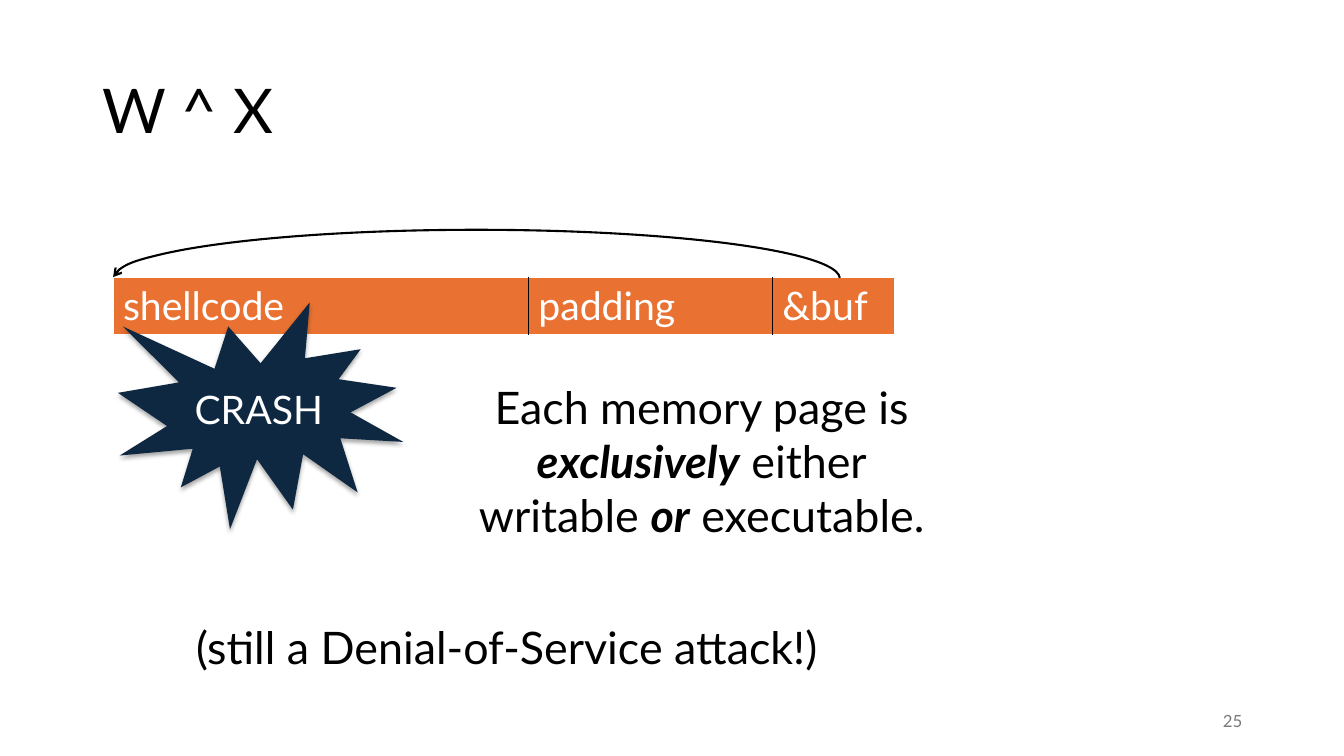
from pptx import Presentation
from pptx.dml.color import RGBColor
from pptx.enum.shapes import MSO_SHAPE
from pptx.enum.text import MSO_ANCHOR, MSO_AUTO_SIZE, PP_ALIGN
from pptx.oxml import parse_xml
from pptx.oxml.ns import nsdecls, qn
from pptx.util import Inches, Pt

ARC, BURST = MSO_SHAPE.ARC, MSO_SHAPE.EXPLOSION1
TOP, MIDDLE = MSO_ANCHOR.TOP, MSO_ANCHOR.MIDDLE
LEFT, CENTER, RIGHT = PP_ALIGN.LEFT, PP_ALIGN.CENTER, PP_ALIGN.RIGHT
FIT_SHAPE = MSO_AUTO_SIZE.SHAPE_TO_FIT_TEXT
FONT = "Lato"
BLACK, WHITE, GREY, ORANGE, NAVY = "000000", "FFFFFF", "797979", "E97132", "0E2841"


def rgb(value):
    """Turn a hex string into a colour."""
    return RGBColor.from_string(value)


def box(left, top, width, height):
    """Turn four numbers in inches into lengths."""
    return [Inches(v) for v in (left, top, width, height)]


def add_run(p, text, size, color=BLACK, strong=False):
    """Add one formatted run; strong means bold italic."""
    r = p.add_run()
    r.text = text
    r.font.name, r.font.size = FONT, Pt(size)
    r.font.color.rgb = rgb(color)
    if strong:
        r.font.bold = r.font.italic = True


def add_title(s, area, text):
    """Place and format the title placeholder."""
    sp = s.shapes.title
    sp.left, sp.top, sp.width, sp.height = box(*area)
    tf = sp.text_frame
    tf.vertical_anchor = MIDDLE
    p = tf.paragraphs[0]
    p.alignment, p.line_spacing = LEFT, 0.9
    add_run(p, text, 44)


def add_text(s, area, lines, size, align, color=BLACK, anchor=TOP, wrap=True, before=0):
    """Add a text box of lines, each a list of (text, strong) runs."""
    tf = s.shapes.add_textbox(*box(*area)).text_frame
    tf.word_wrap, tf.vertical_anchor = wrap, anchor
    if not wrap:
        tf.auto_size = FIT_SHAPE
    p = tf.paragraphs[0]
    p.alignment = align
    if before:
        p._p.get_or_add_pPr().append(parse_xml(
            f'<a:spcBef {nsdecls("a")}><a:spcPct val="{before * 1000}"/></a:spcBef>'))
    for i, line in enumerate(lines):
        if i:
            p.add_line_break()
        for text, strong in line:
            add_run(p, text, size, color, strong)


def add_border(cell, side):
    """Draw a thin black border on one side of a cell."""
    tcPr = cell._tc.get_or_add_tcPr()
    tcPr.insert(0, parse_xml(
        f'<a:{side} {nsdecls("a")} w="12700"><a:solidFill><a:srgbClr val="{BLACK}"/>'
        f'</a:solidFill></a:{side}>'))


def add_buffer(s, area, fields):
    """Add the one-row table of (text, width) buffer fields."""
    table = s.shapes.add_table(1, len(fields), *box(*area)).table
    table.first_row = table.horz_banding = False
    for i, (text, width) in enumerate(fields):
        table.columns[i].width = Inches(width)
        cell = table.cell(0, i)
        cell.fill.solid()
        cell.fill.fore_color.rgb = rgb(ORANGE)
        add_run(cell.text_frame.paragraphs[0], text, 28, WHITE)
        if i < len(fields) - 1:
            add_border(cell, "lnR")
        if i:
            add_border(cell, "lnL")


def add_jump(s, area):
    """Add the arched arrow from the address back to the shellcode."""
    sp = s.shapes.add_shape(ARC, *box(*area))
    sp.adjustments[0], sp.adjustments[1] = 0.078, 107.845
    sp.shadow.inherit = False
    sp.fill.background()
    sp.line.color.rgb, sp.line.width = rgb(BLACK), Pt(1.5)
    sp.line._get_or_add_ln().append(parse_xml(f'<a:tailEnd {nsdecls("a")} type="arrow"/>'))
    sp._element.spPr.find(qn("a:xfrm")).set("flipV", "1")


def add_burst(s, area, text):
    """Add the dark burst with its soft shadow."""
    sp = s.shapes.add_shape(BURST, *box(*area))
    sp.fill.solid()
    sp.fill.fore_color.rgb = rgb(NAVY)
    sp.line.fill.background()
    sp.shadow.inherit = False
    sp._element.spPr.find(qn("a:effectLst")).append(parse_xml(
        f'<a:outerShdw {nsdecls("a")} blurRad="{Pt(3.1)}" dist="{Pt(1.8)}" dir="5400000" '
        f'rotWithShape="0"><a:srgbClr val="{BLACK}"><a:alpha val="35000"/></a:srgbClr>'
        f'</a:outerShdw>'))
    tf = sp.text_frame
    tf.vertical_anchor = MIDDLE
    p = tf.paragraphs[0]
    p.alignment = CENTER
    add_run(p, text, 28, WHITE)


def main():
    """Build and save the slide."""
    prs = Presentation()
    prs.slide_width, prs.slide_height = Inches(13.33), Inches(7.5)
    s = prs.slides.add_slide(prs.slide_layouts[5])
    add_title(s, (0.92, 0.4, 11.5, 1.45), "W ^ X")
    add_text(s, (9.42, 6.95, 3, 0.4), [[("25", False)]], 12, RIGHT, GREY, MIDDLE)
    rule = [
        [("Each memory page is", False)],
        [("exclusively", True), (" either", False)],
        [("writable ", False), ("or", True), (" executable.", False)],
    ]
    add_text(s, (4.17, 3.72, 5.58, 2.78), rule, 32, CENTER, before=20)
    add_buffer(s, (1.12, 2.75, 7.75, 0.57),
               [("shellcode", 4.12), ("padding", 2.42), ("&buf", 1.21)])
    add_jump(s, (1.12, 2.28, 7.21, 0.97))
    add_text(s, (1.8, 6.1, 6.41, 0.64), [[("(still a Denial-of-Service attack!)", False)]],
             32, RIGHT, wrap=False, before=20)
    add_burst(s, (1.17, 3, 2.83, 2.25), "CRASH")
    prs.save("out.pptx")


if __name__ == "__main__":
    main()
